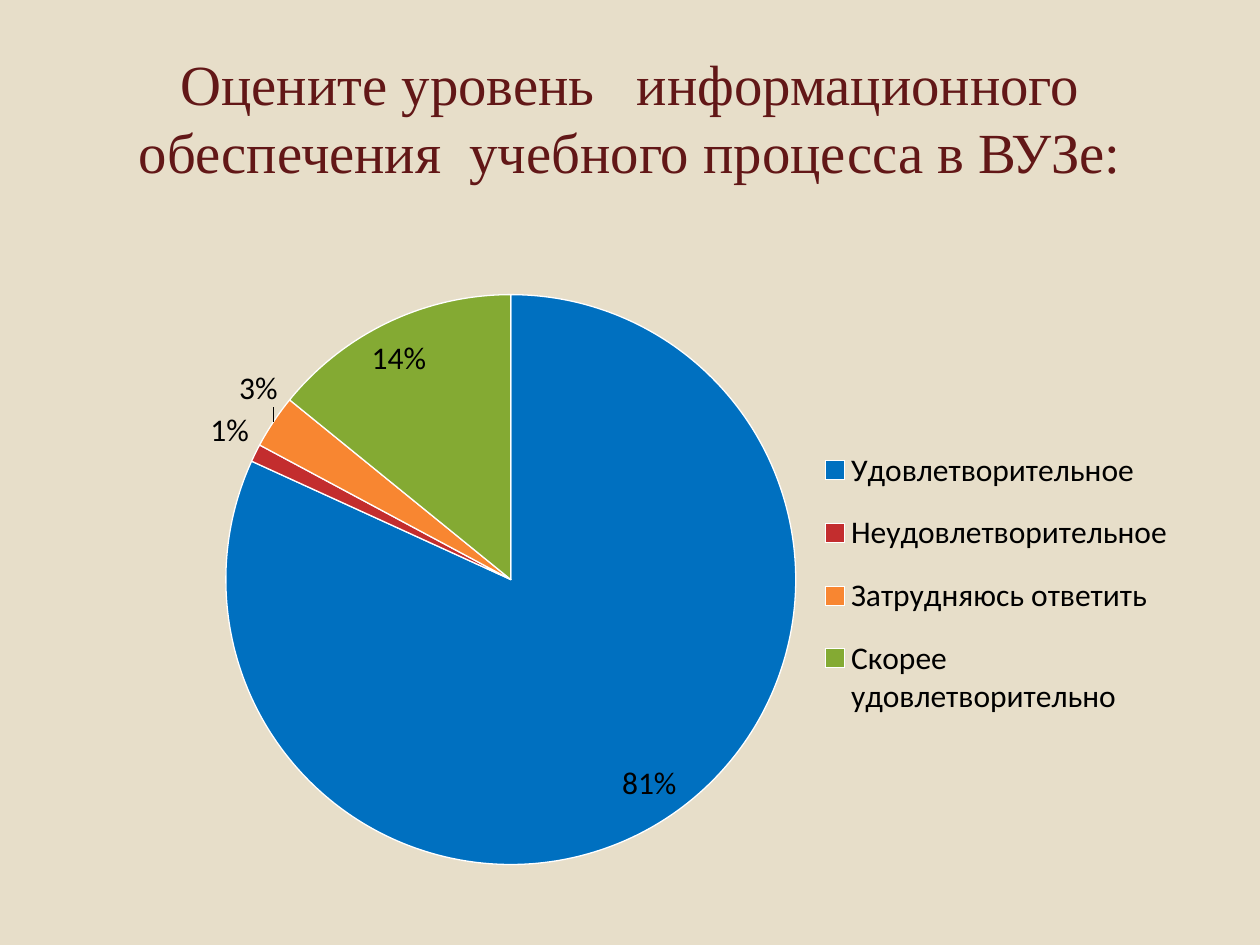
from lxml import etree
from pptx import Presentation
from pptx.chart.data import CategoryChartData
from pptx.dml.color import RGBColor
from pptx.enum.chart import XL_CHART_TYPE as ChartType
from pptx.enum.chart import XL_LABEL_POSITION as LabelPos
from pptx.enum.chart import XL_LEGEND_POSITION as LegendPos
from pptx.enum.text import MSO_ANCHOR, PP_ALIGN
from pptx.oxml.ns import qn
from pptx.util import Cm, Pt

ANSWERS = [
    ("Удовлетворительное", 81, "0070C0"),
    ("Неудовлетворительное", 1, "C32D2E"),
    ("Затрудняюсь ответить", 3, "F88631"),
    ("Скорее удовлетворительно", 14, "84AA33"),
]


def paint(color, value):
    """Set a colour format to a hex string."""
    color.rgb = RGBColor.from_string(value)


def fill_solid(fill, value):
    """Make a fill solid in a hex colour."""
    fill.solid()
    paint(fill.fore_color, value)


def set_layout(element, inner=False, **box):
    """Place a chart part by fractions of the chart area."""
    layout = element.find(qn("c:layout"))
    if layout is None:
        layout = etree.Element(qn("c:layout"))
        if inner:
            element.insert(0, layout)
        else:
            element.find(qn("c:legendPos")).addnext(layout)
    manual = etree.SubElement(layout, qn("c:manualLayout"))
    settings = {"layoutTarget": "inner"} if inner else {}
    settings.update(xMode="edge", yMode="edge", **box)
    for tag, value in settings.items():
        etree.SubElement(manual, qn(f"c:{tag}")).set("val", str(value))


def add_title(s, text, x, y, w, h):
    """Add the centred question in its box."""
    tf = s.shapes.add_textbox(x, y, w, h).text_frame
    tf.word_wrap = True
    tf.vertical_anchor = MSO_ANCHOR.MIDDLE
    p = tf.paragraphs[0]
    p.text = text
    p.alignment = PP_ALIGN.CENTER
    p.font.name = "Times New Roman"
    p.font.size = Pt(32.4)
    paint(p.font.color, "621717")


def add_pie(s, answers, x, y, w, h):
    """Add the pie of answers with its legend in the box."""
    data = CategoryChartData()
    data.categories = [name for name, _, _ in answers]
    data.add_series("Series 1", [value for _, value, _ in answers])
    chart = s.shapes.add_chart(ChartType.PIE, x, y, w, h, data).chart
    chart.has_title = False
    chart.font.name = "Calibri"
    chart.font.size = Pt(18)
    paint(chart.font.color, "000000")

    plot = chart.plots[0]
    plot.vary_by_categories = True
    for i, (_, _, color) in enumerate(answers):
        form = plot.series[0].points[i].format
        fill_solid(form.fill, color)
        fill_solid(form.line.fill, "FFFFFF")
        form.line.width = Pt(0.75)

    plot.has_data_labels = True
    labels = plot.data_labels
    labels.show_value = True
    labels.show_percentage = False
    labels.number_format = '0"%"'
    labels.number_format_is_linked = False
    labels.position = LabelPos.BEST_FIT

    chart.has_legend = True
    legend = chart.legend
    legend.position = LegendPos.RIGHT
    legend.include_in_layout = False
    root = chart.element
    set_layout(root.find(".//" + qn("c:plotArea")), inner=True, x=0.05, y=0.11, w=0.56, h=0.78)
    set_layout(root.find(".//" + qn("c:legend")), x=0.63, y=0.29, w=0.35, h=0.43)


def main():
    """Build the survey slide and save it."""
    prs = Presentation()
    prs.slide_width, prs.slide_height = Cm(25.4), Cm(19.05)
    s = prs.slides.add_slide(prs.slide_layouts[6])
    fill_solid(s.background.fill, "E7DEC9")
    question = "Оцените уровень   информационного обеспечения  учебного процесса в ВУЗе:"
    add_title(s, question, Cm(1.27), Cm(0.76), Cm(22.86), Cm(3.18))
    add_pie(s, ANSWERS, Cm(3.5), Cm(4.32), Cm(20.6), Cm(14.73))
    prs.save("out.pptx")


if __name__ == "__main__":
    main()
